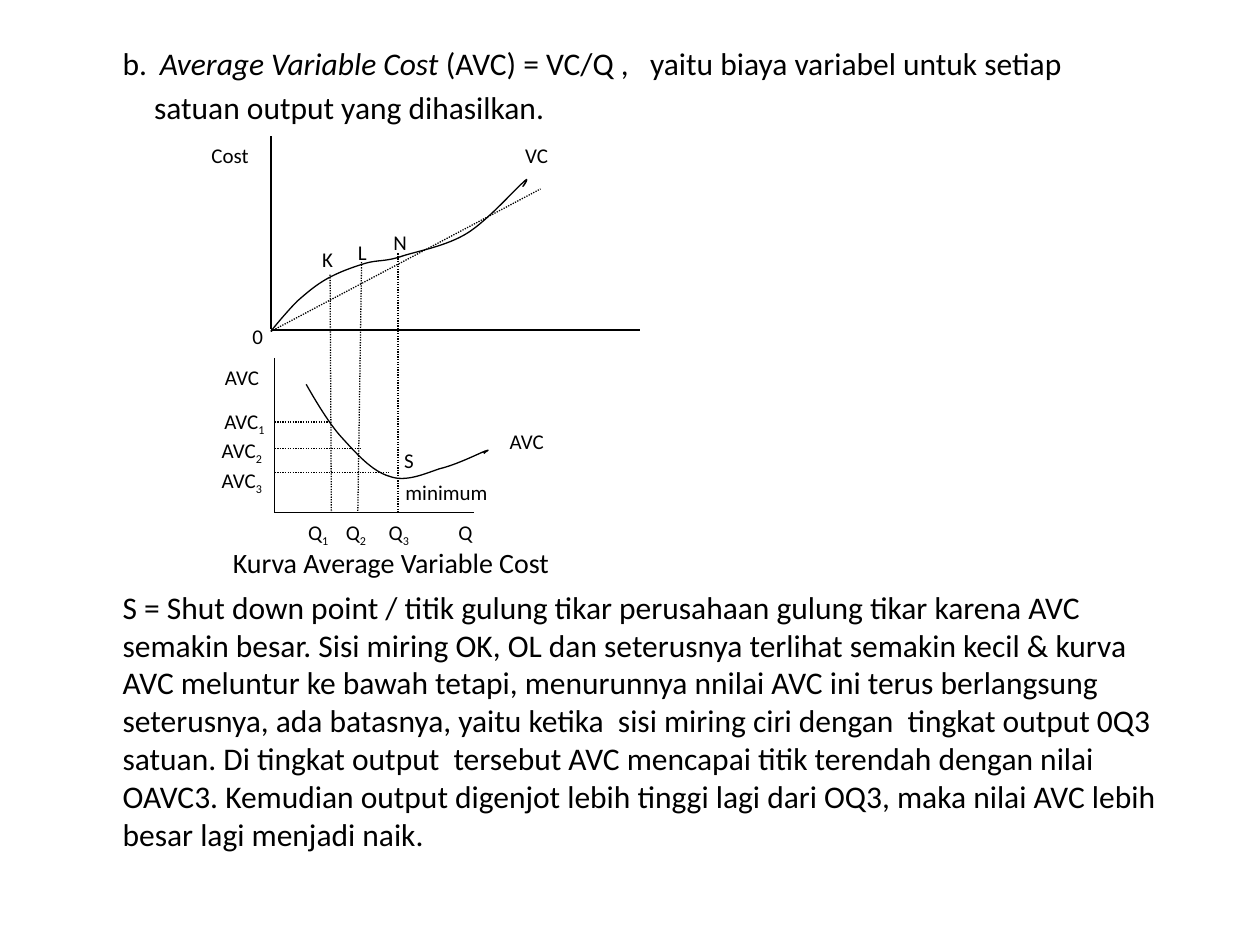
from dataclasses import dataclass
from lxml.etree import SubElement
from pptx import Presentation
from pptx.dml.color import RGBColor
from pptx.enum.dml import MSO_LINE
from pptx.enum.shapes import MSO_CONNECTOR
from pptx.enum.text import MSO_ANCHOR, PP_ALIGN
from pptx.oxml.ns import qn
from pptx.util import Pt


@dataclass(frozen=True)
class Theme:
    font: str = "Calibri"
    ink: RGBColor = RGBColor(0, 0, 0)
    body: int = 18
    caption: int = 16
    label: int = 12
    wide_space: int = 32
    stroke: float = 0.75


theme = Theme()
PX = 9144

deck = Presentation()
deck.slide_width, deck.slide_height = 1000 * PX, 750 * PX
slide = deck.slides.add_slide(deck.slide_layouts[6])


def text(paragraphs, x, y, w, h, size=theme.label, align=PP_ALIGN.LEFT,
         wrap=True, anchor=MSO_ANCHOR.TOP):
    frame = slide.shapes.add_textbox(x * PX, y * PX, w * PX, h * PX).text_frame
    frame.word_wrap = wrap
    frame.vertical_anchor = anchor
    for number, (runs, layout) in enumerate(paragraphs):
        paragraph = frame.add_paragraph() if number else frame.paragraphs[0]
        paragraph.alignment = align
        if layout:
            paragraph.space_before = Pt(layout.get("before", 0))
            properties = paragraph._p.get_or_add_pPr()
            properties.set("marL", str(Pt(layout["left"])))
            properties.set("indent", "0")
            if "spacing" in layout:
                paragraph.line_spacing = Pt(layout["spacing"])
        for words, style in runs:
            run = paragraph.add_run()
            run.text = words
            run.font.name = theme.font
            run.font.size = Pt(style.get("size", size))
            run.font.color.rgb = theme.ink
            if style.get("italic"):
                run.font.italic = True
            if style.get("subscript"):
                run._r.get_or_add_rPr().set("baseline", "-25000")


definition = [("b.", {}), (" ", {"size": theme.wide_space}),
              ("Average Variable Cost", {"italic": True}),
              (" (AVC) = VC/Q ,   yaitu biaya variabel untuk setiap", {})]
definition_end = [("satuan output yang dihasilkan.", {})]
explanation = [(
    "S = Shut down point / titik gulung tikar perusahaan gulung tikar karena AVC "
    "semakin besar. Sisi miring OK, OL dan seterusnya terlihat semakin kecil & kurva  "
    "AVC meluntur ke bawah tetapi, menurunnya nnilai AVC ini terus berlangsung "
    "seterusnya, ada batasnya, yaitu ketika  sisi miring ciri dengan  tingkat output 0Q3 "
    "satuan. Di tingkat output  tersebut AVC mencapai titik terendah dengan nilai "
    "OAVC3. Kemudian output digenjot lebih tinggi lagi dari OQ3, maka nilai AVC lebih "
    "besar lagi menjadi naik.", {})]
text([(definition, {"left": 27, "spacing": 22}),
      (definition_end, {"left": 45, "spacing": 22, "before": 0.6}),
      (explanation, {"left": 27, "before": 264})],
     50, 33, 900, 637, size=theme.body)

axes = [(215, 108, 215, 261), (215, 262, 508, 262),
        (218, 284, 218, 407), (218, 407, 376, 407)]
slope_ray = (215, 263, 429, 150)
output_drops = [(262, 218, 263, 407), (287, 208, 284, 407), (316, 201, 316, 407)]
cost_levels = [(218, y, end, y) for y, end in ((335, 263), (356, 286), (375, 309))]
dotted = [slope_ray, *output_drops, *cost_levels]
for ends in axes + dotted:
    guide = slide.shapes.add_connector(MSO_CONNECTOR.STRAIGHT, *(v * PX for v in ends))
    guide.line.color.rgb = theme.ink
    guide.line.width = Pt(theme.stroke)
    if ends in dotted:
        guide.line.dash_style = MSO_LINE.ROUND_DOT
    SubElement(guide._element.spPr, qn("a:effectLst"))

vc_curve = [(215, 263),
            (218, 259), (229, 246), (236, 239), (244, 232), (251, 226), (260, 221),
            (269, 216), (280, 212), (290, 209), (300, 206), (306, 208), (320, 203),
            (333, 199), (355, 195), (371, 185), (387, 175), (408, 151), (415, 145),
            (422, 138), (415, 148), (415, 148), (416, 147), (418, 144), (418, 143)]
avc_curve = [(243, 305),
             (247, 312), (260, 335), (271, 347), (282, 359), (295, 374), (309, 378),
             (322, 383), (337, 376), (349, 372), (362, 369), (380, 360), (385, 358),
             (391, 356), (384, 359), (384, 360)]
for start, *controls in (vc_curve, avc_curve):
    outline = slide.shapes.build_freeform(*start, scale=PX)
    outline.add_line_segments(controls, close=False)
    curve = outline.convert_to_shape()
    curve.shadow.inherit = False
    curve.fill.background()
    curve.line.color.rgb = theme.ink
    curve.line.width = Pt(theme.stroke)
    trace = next(curve._element.iter(qn("a:path")))
    steps = trace.findall(qn("a:lnTo"))
    for first in range(0, len(steps), 3):
        bend = SubElement(trace, qn("a:cubicBezTo"))
        for step in steps[first:first + 3]:
            bend.append(step[0])
            trace.remove(step)

for name, x, y, w in (("Cost", 158, 108, 56), ("VC", 407, 108, 56),
                      ("Q", 354, 407, 34), ("minimum", 312, 376, 90)):
    text([([(name, {})], {})], x, y, w, 31)

for name, index, x, y, w in (
        ("K", "", 232, 191, 56), ("L", "", 265, 185, 45), ("N", "", 295, 177, 45),
        ("S", "", 302, 350, 45), ("0", "", 182, 252, 45),
        ("AVC", "", 158, 284, 68), ("AVC", "", 384, 335, 68),
        ("AVC", "1", 160, 319, 68), ("AVC", "2", 158, 342, 68), ("AVC", "3", 158, 366, 68),
        ("Q", "1", 230, 407, 45), ("Q", "2", 260, 407, 45), ("Q", "3", 294, 407, 45)):
    runs = [(name, {})] + ([(index, {"subscript": True})] if index else [])
    text([(runs, {})], x, y, w, 31, align=PP_ALIGN.CENTER)

text([([("Kurva Average Variable Cost", {}), (" ", {"size": theme.body})], {})],
     175, 425, 313, 40, size=theme.caption, wrap=False, anchor=MSO_ANCHOR.MIDDLE)

deck.save("out.pptx")
